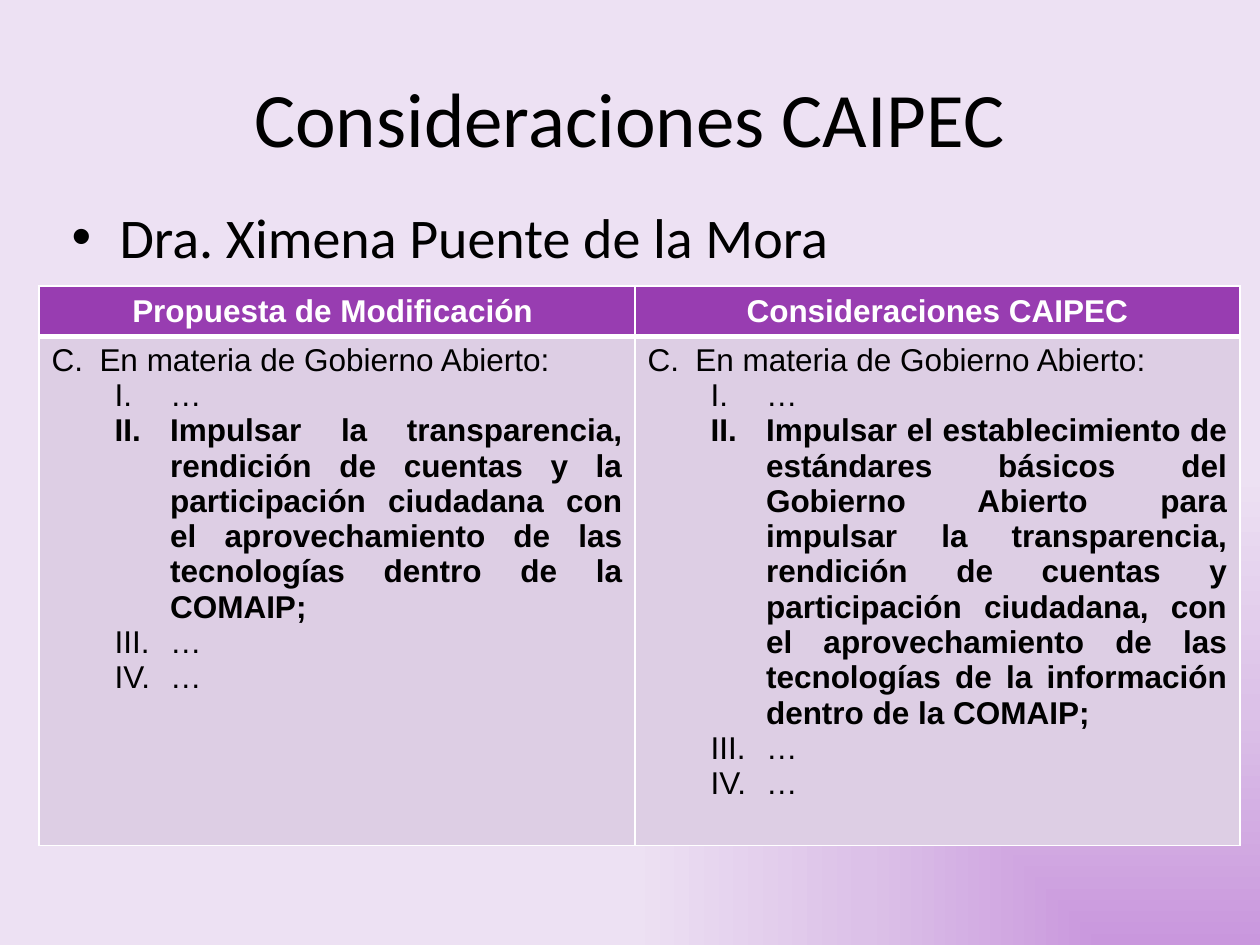
import pptx
import pptx.util
import pptx.dml.color
import pptx.enum.text
import pptx.oxml
import pptx.oxml.ns
from pptx.util import Inches

RGBColor = pptx.dml.color.RGBColor
ALIGN = pptx.enum.text.PP_ALIGN
ANCHOR = pptx.enum.text.MSO_ANCHOR

BLACK = RGBColor(0x00, 0x00, 0x00)
WHITE = RGBColor(0xFF, 0xFF, 0xFF)
PURPLE = RGBColor(0x98, 0x3D, 0xB1)
LILAC = RGBColor(0xDD, 0xCE, 0xE4)
ORCHID = RGBColor(0xC9, 0x97, 0xDD)
MAUVE = RGBColor(0xDC, 0xC1, 0xE8)
PALE = RGBColor(0xED, 0xE1, 0xF3)

HEADERS = ["Propuesta de Modificación ", "Consideraciones CAIPEC"]
INTRO = "En materia de Gobierno Abierto: "
PROPOSALS = [
    "Impulsar la transparencia, rendición de cuentas y la participación ciudadana "
    "con el aprovechamiento de las tecnologías dentro de la COMAIP; ",
    "Impulsar el establecimiento de estándares básicos del Gobierno Abierto para "
    "impulsar la transparencia, rendición de cuentas y participación ciudadana, con "
    "el aprovechamiento de las tecnologías de la información dentro de la COMAIP; ",
]


def xml(tag, content="", **attrs):
    pairs = "".join(f' {name}="{value}"' for name, value in attrs.items())
    ns = pptx.oxml.ns.nsdecls("a")
    return pptx.oxml.parse_xml(f"<a:{tag} {ns}{pairs}>{content}</a:{tag}>")


def write(p, text, size=18, font="Arial", color=BLACK, bold=False,
          align=ALIGN.LEFT, level=0, indent=None, bullet=None, before=0):
    p.alignment = align
    p.level = level
    p.space_before = pptx.util.Pt(before)
    if indent:
        left, hanging = indent
        pPr = p._p.get_or_add_pPr()
        pPr.set("marL", str(Inches(left)))
        pPr.set("indent", str(-Inches(hanging)))
        pPr.append(xml("buFont", typeface="Arial"))
        pPr.append(bullet)
    r = p.add_run()
    r.text = text
    r.font.size = pptx.util.Pt(size)
    r.font.name = font
    r.font.color.rgb = color
    r.font.bold = bold


def set_background(s):
    fill = s.background.fill
    fill.solid()
    solid = s._element.xpath(".//p:bgPr/a:solidFill")[0]
    stops = "".join(f'<a:gs pos="{pos}000"><a:srgbClr val="{color}"/></a:gs>'
                    for pos, color in [(0, ORCHID), (50, MAUVE), (100, PALE)])
    gradient = xml("gradFill", f'<a:gsLst>{stops}</a:gsLst><a:path path="rect">'
                   '<a:fillToRect l="100000" t="100000"/></a:path>', rotWithShape=1)
    solid.getparent().replace(solid, gradient)


def place_title(s, left, top, width, height):
    sp = s.shapes.title
    sp.left, sp.top, sp.width, sp.height = map(Inches, (left, top, width, height))
    sp.text_frame.vertical_anchor = ANCHOR.MIDDLE
    write(sp.text_frame.paragraphs[0], "Consideraciones CAIPEC",
          size=44, font="Calibri", align=ALIGN.CENTER)


def place_speaker(s, left, top, width, height):
    tf = s.shapes.add_textbox(*map(Inches, (left, top, width, height))).text_frame
    tf.word_wrap = True
    write(tf.paragraphs[0], "Dra. Ximena Puente de la Mora", size=32, font="Calibri",
          indent=(0.38, 0.38), bullet=xml("buChar", char="•"), before=3)


def style_cell(cell, color, top, bottom):
    tcPr = cell._tc.get_or_add_tcPr()
    for side, width in [("L", 1), ("R", 1), ("T", top), ("B", bottom)]:
        tcPr.append(xml(f"ln{side}", f'<a:solidFill><a:srgbClr val="{WHITE}"/></a:solidFill>',
                        w=pptx.util.Pt(width)))
    cell.fill.solid()
    cell.fill.fore_color.rgb = color


def fill_article(tf, proposal):
    write(tf.paragraphs[0], INTRO, align=ALIGN.JUSTIFY, indent=(0.38, 0.38),
          bullet=xml("buAutoNum", type="alphaUcPeriod", startAt=3))
    for text in ["…", proposal, "…", "…"]:
        write(tf.add_paragraph(), text, bold=text == proposal, align=ALIGN.JUSTIFY,
              level=1, indent=(0.94, 0.44),
              bullet=xml("buAutoNum", type="romanUcPeriod"))


def place_comparison(s, left, top, width, height):
    table = s.shapes.add_table(2, 2, *map(Inches, (left, top, width, height))).table
    first_width, header_height = 4.73, 0.4
    table.columns[0].width = Inches(first_width)
    table.columns[1].width = Inches(width - first_width)
    table.rows[0].height = Inches(header_height)
    table.rows[1].height = Inches(height - header_height)
    for col, (header, proposal) in enumerate(zip(HEADERS, PROPOSALS)):
        head, body = table.cell(0, col), table.cell(1, col)
        style_cell(head, PURPLE, top=1, bottom=3)
        style_cell(body, LILAC, top=3, bottom=1)
        head.vertical_anchor = ANCHOR.MIDDLE
        write(head.text_frame.paragraphs[0], header, color=WHITE, bold=True,
              align=ALIGN.CENTER)
        fill_article(body.text_frame, proposal)


def main():
    prs = pptx.Presentation()
    prs.slide_width, prs.slide_height = Inches(10), Inches(7.5)
    s = prs.slides.add_slide(prs.slide_layouts[5])
    set_background(s)
    place_title(s, 0.5, 0.3, 9, 1.25)
    place_speaker(s, 0.47, 1.56, 8.98, 4.84)
    place_comparison(s, 0.31, 2.27, 9.53, 4.44)
    prs.save("out.pptx")


if __name__ == "__main__":
    main()
